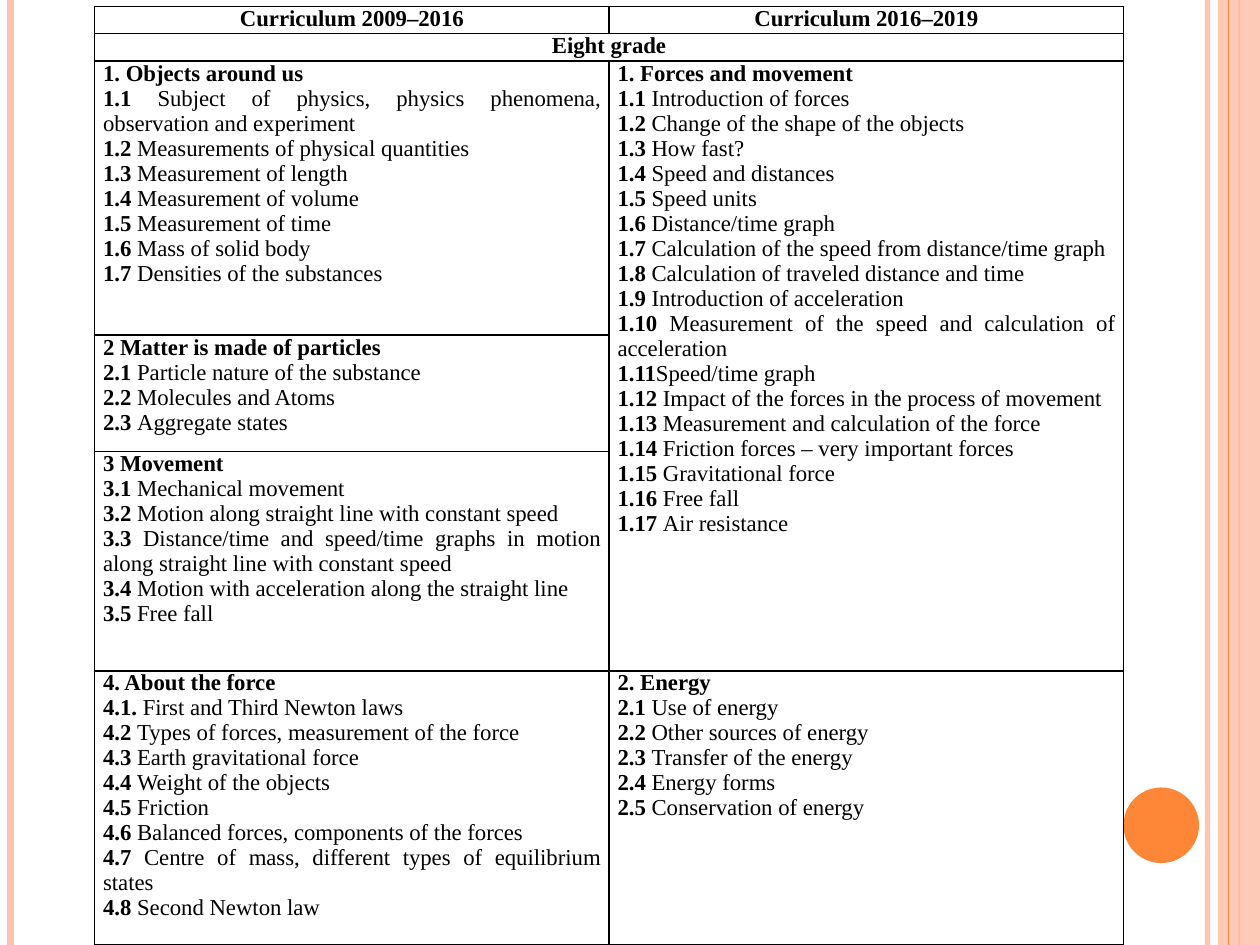
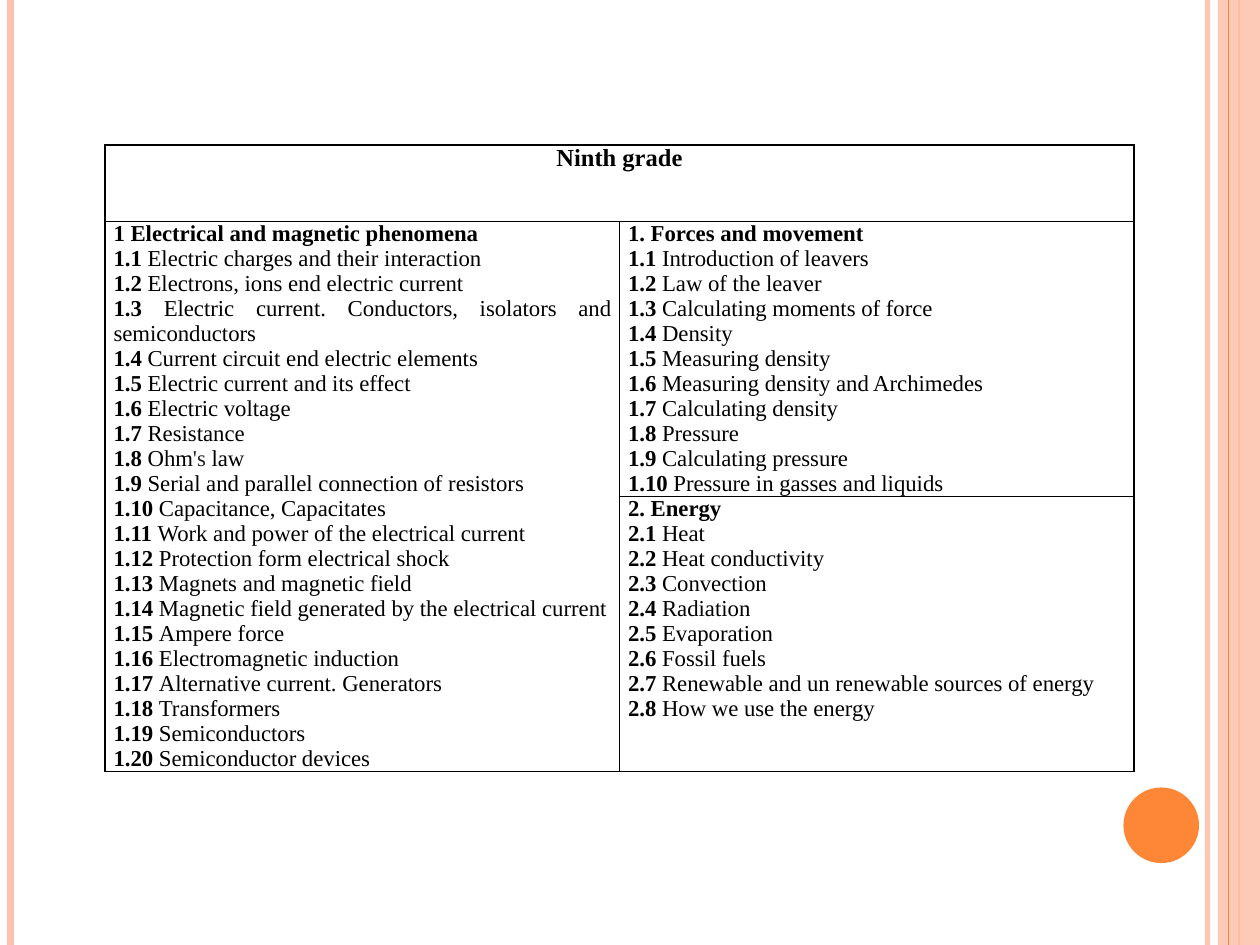
from dataclasses import dataclass
from itertools import takewhile

from lxml import etree
from pptx import Presentation, util as u
from pptx.dml.color import RGBColor
from pptx.enum import shapes, text
from pptx.oxml.ns import qn

GRID_COLS, GRID_ROWS = 120, 90
UNIT = u.Inches(10) / GRID_COLS


@dataclass(frozen=True)
class Theme:
    accent: str = "FE8637"
    pale: str = "FEC3AE"
    ink: str = "000000"
    soft_ink: str = "222222"
    font: str = "Times New Roman"
    body: float = 13
    grade: float = 14
    border: float = 1
    cell_inset: float = 0.82


THEME = Theme()

OBJECTS = """1. Objects around us
1.1 Subject of physics, physics phenomena, observation and experiment
1.2 Measurements of physical quantities
1.3 Measurement of length
1.4 Measurement of volume
1.5 Measurement of time
1.6 Mass of solid body
1.7 Densities of the substances"""

EIGHTH_FORCES = """1. Forces and movement
1.1 Introduction of forces
1.2 Change of the shape of the objects
1.3 How fast?
1.4 Speed and distances
1.5 Speed units
1.6 Distance/time graph
1.7 Calculation of the speed from distance/time graph
1.8 Calculation of traveled distance and time
1.9 Introduction of acceleration
1.10 Measurement of the speed and calculation of acceleration
1.11Speed/time graph
1.12 Impact of the forces in the process of movement
1.13 Measurement and calculation of the force
1.14 Friction forces – very important forces
1.15 Gravitational force
1.16 Free fall
1.17 Air resistance"""

PARTICLES = """2 Matter is made of particles
2.1 Particle nature of the substance
2.2 Molecules and Atoms
2.3 Aggregate states"""

MOVEMENT = """3 Movement
3.1 Mechanical movement
3.2 Motion along straight line with constant speed
3.3 Distance/time and speed/time graphs in motion along straight line with constant speed
3.4 Motion with acceleration along the straight line
3.5 Free fall"""

ABOUT_FORCE = """4. About the force
4.1. First and Third Newton laws
4.2 Types of forces, measurement of the force
4.3 Earth gravitational force
4.4 Weight of the objects
4.5 Friction
4.6 Balanced forces, components of the forces
4.7 Centre of mass, different types of equilibrium states
4.8 Second Newton law"""

EIGHTH_ENERGY = """2. Energy
2.1 Use of energy
2.2 Other sources of energy
2.3 Transfer of the energy
2.4 Energy forms
2.5 Conservation of energy"""

ELECTRICITY = """1 Electrical and magnetic phenomena
1.1 Electric charges and their interaction
1.2 Electrons, ions end electric current
1.3 Electric current. Conductors, isolators and semiconductors
1.4 Current circuit end electric elements
1.5 Electric current and its effect
1.6 Electric voltage
1.7 Resistance
1.8 Ohm's law
1.9 Serial and parallel connection of resistors
1.10 Capacitance, Capacitates
1.11 Work and power of the electrical current
1.12 Protection form electrical shock
1.13 Magnets and magnetic field
1.14 Magnetic field generated by the electrical current
1.15 Ampere force
1.16 Electromagnetic induction
1.17 Alternative current. Generators
1.18 Transformers
1.19 Semiconductors
1.20 Semiconductor devices"""

NINTH_FORCES = """1. Forces and movement
1.1 Introduction of leavers
1.2 Law of the leaver
1.3 Calculating moments of force
1.4 Density
1.5 Measuring density
1.6 Measuring density and Archimedes
1.7 Calculating density
1.8 Pressure
1.9 Calculating pressure
1.10 Pressure in gasses and liquids"""

NINTH_ENERGY = """2. Energy
2.1 Heat
2.2 Heat conductivity
2.3 Convection
2.4 Radiation
2.5 Evaporation
2.6 Fossil fuels
2.7 Renewable and un renewable sources of energy
2.8 How we use the energy"""


def units(count):
    return u.Emu(round(count * UNIT))


def apply(target, formats):
    for name, value in formats.items():
        setattr(target, name, value)


def set_alpha(fill_owner, percent):
    for colour in fill_owner.iter(qn("a:srgbClr")):
        etree.SubElement(colour, qn("a:alpha"), val=str(percent * 1000))


def add_stripe(slide, column, colour, weight, alpha=None):
    stripe = slide.shapes.add_connector(
        shapes.MSO_CONNECTOR.STRAIGHT,
        units(column), 0, units(column), units(GRID_ROWS))
    stripe.line.color.rgb = RGBColor.from_string(colour)
    stripe.line.width = u.Pt(weight)
    properties = stripe.element.spPr
    if alpha:
        set_alpha(properties, alpha)
    etree.SubElement(properties, qn("a:effectLst"))
    return stripe


def add_solid(slide, kind, box, colour, alpha=None):
    solid = slide.shapes.add_shape(kind, *map(units, box))
    solid.shadow.inherit = False
    solid.fill.solid()
    solid.fill.fore_color.rgb = RGBColor.from_string(colour)
    solid.line.fill.background()
    if alpha:
        set_alpha(solid.element.spPr, alpha)
    return solid


def decorate_layout(layout, slide):
    for placeholder in list(layout.placeholders):
        placeholder.element.getparent().remove(placeholder.element)
    decorations = [
        add_stripe(slide, 115, THEME.pale, 3, 93),
        add_stripe(slide, 1, THEME.pale, 4.5),
        add_stripe(slide, 118, THEME.accent, 1.5),
        add_solid(slide, shapes.MSO_SHAPE.RECTANGLE,
                  (116, 0, 4, GRID_ROWS), THEME.pale, 87),
        add_stripe(slide, 117, THEME.accent, 0.75),
        add_solid(slide, shapes.MSO_SHAPE.OVAL, (107, 75, 7.2, 7.2), THEME.accent),
    ]
    for decoration in decorations:
        layout.shapes.element.append(decoration.element)


def add_run(paragraph, words, size, bold, colour=THEME.ink):
    run = paragraph.add_run()
    run.text = words
    apply(run.font, {"name": THEME.font, "size": u.Pt(size), "bold": bold})
    run.font.color.rgb = RGBColor.from_string(colour)


def write_heading(cell, words, size=THEME.body):
    paragraph = cell.text_frame.paragraphs[0]
    paragraph.alignment = text.PP_ALIGN.CENTER
    add_run(paragraph, words, size, True)


def write_topics(cell, topics):
    frame = cell.text_frame
    for index, topic in enumerate(topics.splitlines()):
        paragraph = frame.add_paragraph() if index else frame.paragraphs[0]
        paragraph.alignment = text.PP_ALIGN.JUSTIFY
        if index == 0:
            add_run(paragraph, topic, THEME.body, True)
            continue
        number = "".join(takewhile(lambda mark: mark in "0123456789. ", topic))
        add_run(paragraph, number, THEME.body, True)
        before, possessive, after = topic[len(number):].partition("'s")
        add_run(paragraph, before, THEME.body, False)
        if possessive:
            add_run(paragraph, possessive, THEME.body, False, THEME.soft_ink)
            add_run(paragraph, after, THEME.body, False)


def format_cell(cell):
    inset = units(THEME.cell_inset)
    apply(cell, {"margin_left": inset, "margin_right": inset,
                 "margin_top": 0, "margin_bottom": 0,
                 "vertical_anchor": text.MSO_ANCHOR.TOP})
    cell.fill.background()
    properties = cell._tc.get_or_add_tcPr()
    for position, side in enumerate(("lnL", "lnR", "lnT", "lnB")):
        border = etree.Element(qn(f"a:{side}"), w=str(u.Pt(THEME.border)))
        fill = etree.SubElement(border, qn("a:solidFill"))
        etree.SubElement(fill, qn("a:srgbClr"), val=THEME.ink)
        properties.insert(position, border)


def add_curriculum(slide, left, top, row_heights, merges):
    table = slide.shapes.add_table(
        len(row_heights), 2, units(left), units(top),
        units(98), units(sum(row_heights))).table
    apply(table, {"first_row": False, "horz_banding": False})
    for column in table.columns:
        column.width = units(49)
    for row, height in zip(table.rows, row_heights):
        row.height = units(height)
    for cell in table.iter_cells():
        format_cell(cell)
    for first, last in merges:
        table.cell(*first).merge(table.cell(*last))
    return table


def fill_topics(table, topics_by_cell):
    for position, topics in topics_by_cell.items():
        write_topics(table.cell(*position), topics)


def build_eighth_grade(slide):
    curriculum = add_curriculum(
        slide, 9, 0.6, (2.6, 2.6, 26.1, 11.1, 20.9, 26.1),
        [((1, 0), (1, 1)), ((2, 1), (4, 1))])
    write_heading(curriculum.cell(0, 0), "Curriculum 2009–2016")
    write_heading(curriculum.cell(0, 1), "Curriculum 2016–2019")
    write_heading(curriculum.cell(1, 0), "Eight grade")
    fill_topics(curriculum, {
        (2, 0): OBJECTS, (2, 1): EIGHTH_FORCES, (3, 0): PARTICLES,
        (4, 0): MOVEMENT, (5, 0): ABOUT_FORCE, (5, 1): EIGHTH_ENERGY})


def build_ninth_grade(slide):
    curriculum = add_curriculum(
        slide, 10, 13.8, (7.3, 26.2, 26.2),
        [((0, 0), (0, 1)), ((1, 0), (2, 0))])
    write_heading(curriculum.cell(0, 0), "Ninth grade", THEME.grade)
    fill_topics(curriculum, {
        (1, 0): ELECTRICITY, (1, 1): NINTH_FORCES, (2, 1): NINTH_ENERGY})


def main():
    deck = Presentation()
    apply(deck, {"slide_width": units(GRID_COLS), "slide_height": units(GRID_ROWS)})
    layout = deck.slide_layouts[6]
    eighth_grade = deck.slides.add_slide(layout)
    decorate_layout(layout, eighth_grade)
    build_eighth_grade(eighth_grade)
    build_ninth_grade(deck.slides.add_slide(layout))
    deck.save("out.pptx")


if __name__ == "__main__":
    main()
